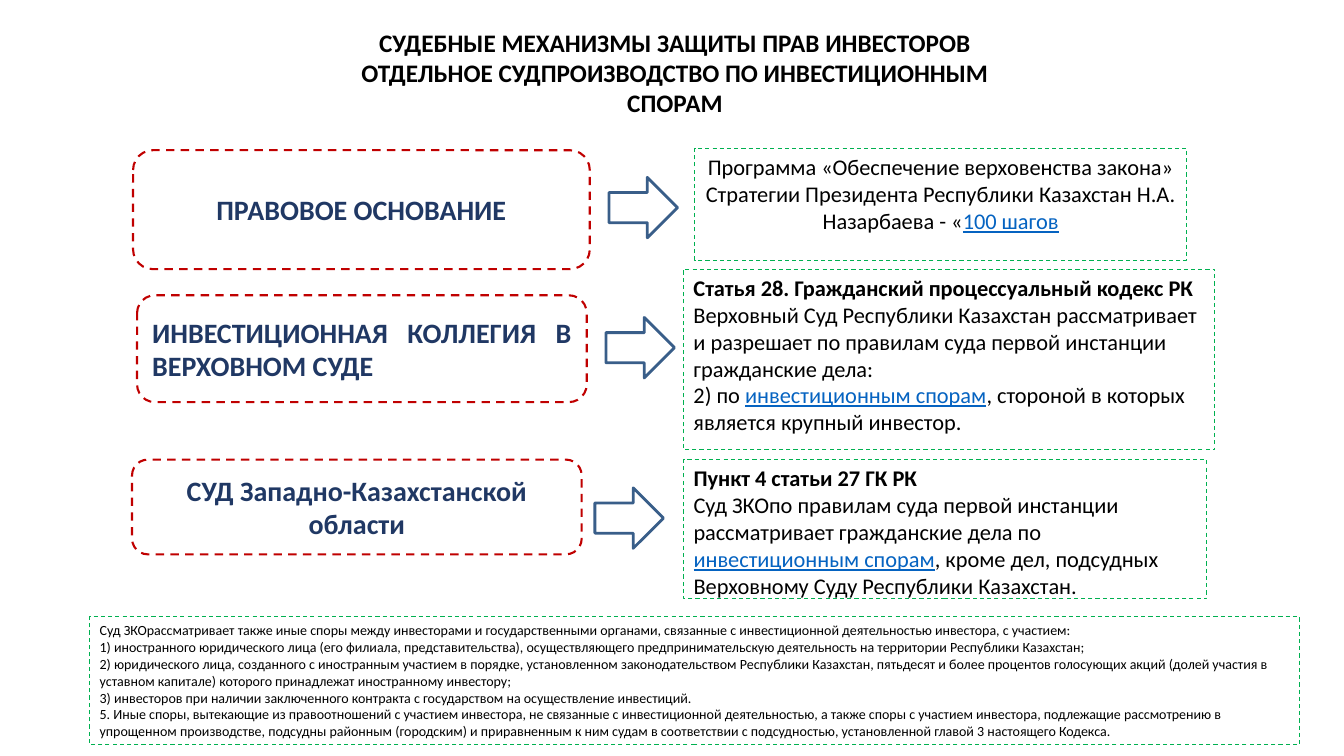
from pptx import Presentation, util as u
from pptx.dml.color import RGBColor
from pptx.enum import dml, shapes, text

THEME = dict(
    font="Calibri", ink="000000", heading="203864", link="0563C1",
    stage_line="C00000", detail_line="00B050", arrow_line="395E89",
    title_size=18, stage_size=20, detail_size=16, note_size=10,
)
PLAIN, BOLD, LINK = "plain", "bold", "link"
LEFT, CENTER, JUSTIFY = text.PP_ALIGN.LEFT, text.PP_ALIGN.CENTER, text.PP_ALIGN.JUSTIFY

TITLE = [
    [("СУДЕБНЫЕ МЕХАНИЗМЫ ЗАЩИТЫ ПРАВ ИНВЕСТОРОВ", BOLD)],
    [("ОТДЕЛЬНОЕ СУДПРОИЗВОДСТВО ПО ИНВЕСТИЦИОННЫМ СПОРАМ", BOLD)],
]
TITLE_AT = (3.36, 0.22, 6.67, 1.01)

STAGES = [
    dict(
        name="ПРАВОВОЕ ОСНОВАНИЕ", name_align=CENTER, name_at=(1.32, 1.49, 4.53, 1.18),
        arrow_from=(6.04, 1.76),
        detail_align=CENTER, detail_at=(6.89, 1.47, 4.88, 1.11),
        detail=[
            [("Программа «Обеспечение верховенства закона» Стратегии Президента "
              "Республики Казахстан Н.А. Назарбаева - «", PLAIN), ("100 шагов", LINK)],
        ],
    ),
    dict(
        name="ИНВЕСТИЦИОННАЯ КОЛЛЕГИЯ В ВЕРХОВНОМ СУДЕ", name_align=JUSTIFY,
        name_at=(1.36, 2.93, 4.46, 1.06),
        arrow_from=(6.01, 3.15),
        detail_align=LEFT, detail_at=(6.78, 2.67, 5.27, 1.79),
        detail=[
            [("Статья 28. Гражданский процессуальный кодекс РК ", BOLD),
             ("Верховный Суд Республики Казахстан рассматривает и разрешает по правилам "
              "суда первой инстанции гражданские дела:", PLAIN)],
            [("2) по ", PLAIN), ("инвестиционным спорам", LINK),
             (", стороной в которых является крупный инвестор.", PLAIN)],
        ],
    ),
    dict(
        name="СУД Западно-Казахстанской области", name_align=CENTER,
        name_at=(1.31, 4.56, 4.46, 0.94),
        arrow_from=(5.9, 4.84),
        detail_align=LEFT, detail_at=(6.78, 4.56, 5.19, 1.38),
        detail=[
            [("Пункт 4 статьи 27 ГК РК", BOLD)],
            [("Суд ЗКОпо правилам суда первой инстанции рассматривает гражданские дела "
              "по ", PLAIN), ("инвестиционным спорам", LINK),
             (", кроме дел, подсудных Верховному Суду Республики Казахстан.", PLAIN)],
        ],
    ),
]
ARROW_SIZE = (0.68, 0.6)

NOTES = [
    "Суд ЗКОрассматривает также иные споры между инвесторами и государственными органами, "
    "связанные с инвестиционной деятельностью инвестора, с участием:",
    "1) иностранного юридического лица (его филиала, представительства), осуществляющего "
    "предпринимательскую деятельность на территории Республики Казахстан;",
    "2) юридического лица, созданного с иностранным участием в порядке, установленном "
    "законодательством Республики Казахстан, пятьдесят и более процентов голосующих акций "
    "(долей участия в уставном капитале) которого принадлежат иностранному инвестору;",
    "3) инвесторов при наличии заключенного контракта с государством на осуществление инвестиций.",
    "5. Иные споры, вытекающие из правоотношений с участием инвестора, не связанные с "
    "инвестиционной деятельностью, а также споры с участием инвестора, подлежащие рассмотрению "
    "в упрощенном производстве, подсудны районным (городским) и приравненным к ним судам в "
    "соответствии с подсудностью, установленной главой 3 настоящего Кодекса.",
]
NOTES_AT = (0.89, 6.12, 12, 1.27)


def write(holder, paragraphs, size, color=THEME["ink"], align=LEFT,
          anchor=text.MSO_ANCHOR.TOP):
    frame = holder.text_frame
    frame.word_wrap = True
    frame.vertical_anchor = anchor
    for index, pieces in enumerate(paragraphs):
        paragraph = frame.add_paragraph() if index else frame.paragraphs[0]
        paragraph.alignment = align
        for words, style in pieces:
            run = paragraph.add_run()
            run.text = words
            run.font.name = THEME["font"]
            run.font.size = u.Pt(size)
            run.font.bold = style == BOLD
            run.font.underline = style == LINK
            run.font.color.rgb = RGBColor.from_string(THEME["link"] if style == LINK else color)


def outline(slide, kind, at, color, width, dashed=True):
    figure = slide.shapes.add_shape(kind, *map(u.Inches, at))
    figure.shadow.inherit = False
    figure.fill.background()
    figure.line.color.rgb = RGBColor.from_string(color)
    figure.line.width = u.Pt(width)
    if dashed:
        figure.line.dash_style = dml.MSO_LINE.DASH
    return figure


def main():
    deck = Presentation()
    deck.slide_width, deck.slide_height = u.Inches(13.33), u.Inches(7.5)
    slide = deck.slides.add_slide(deck.slide_layouts[6])
    kinds = shapes.MSO_SHAPE

    for stage in STAGES:
        name = outline(slide, kinds.ROUNDED_RECTANGLE, stage["name_at"], THEME["stage_line"], 1.5)
        write(name, [[(stage["name"], BOLD)]], THEME["stage_size"], color=THEME["heading"],
              align=stage["name_align"], anchor=text.MSO_ANCHOR.MIDDLE)
        outline(slide, kinds.RIGHT_ARROW, stage["arrow_from"] + ARROW_SIZE,
                THEME["arrow_line"], 2, dashed=False)
        detail = outline(slide, kinds.RECTANGLE, stage["detail_at"], THEME["detail_line"], 0.75)
        write(detail, stage["detail"], THEME["detail_size"], align=stage["detail_align"])

    notes = outline(slide, kinds.RECTANGLE, NOTES_AT, THEME["detail_line"], 0.75)
    write(notes, [[(note, PLAIN)] for note in NOTES], THEME["note_size"])

    title = slide.shapes.add_textbox(*map(u.Inches, TITLE_AT))
    write(title, TITLE, THEME["title_size"], align=CENTER)
    title.text_frame.auto_size = text.MSO_AUTO_SIZE.SHAPE_TO_FIT_TEXT

    deck.save("out.pptx")


if __name__ == "__main__":
    main()
